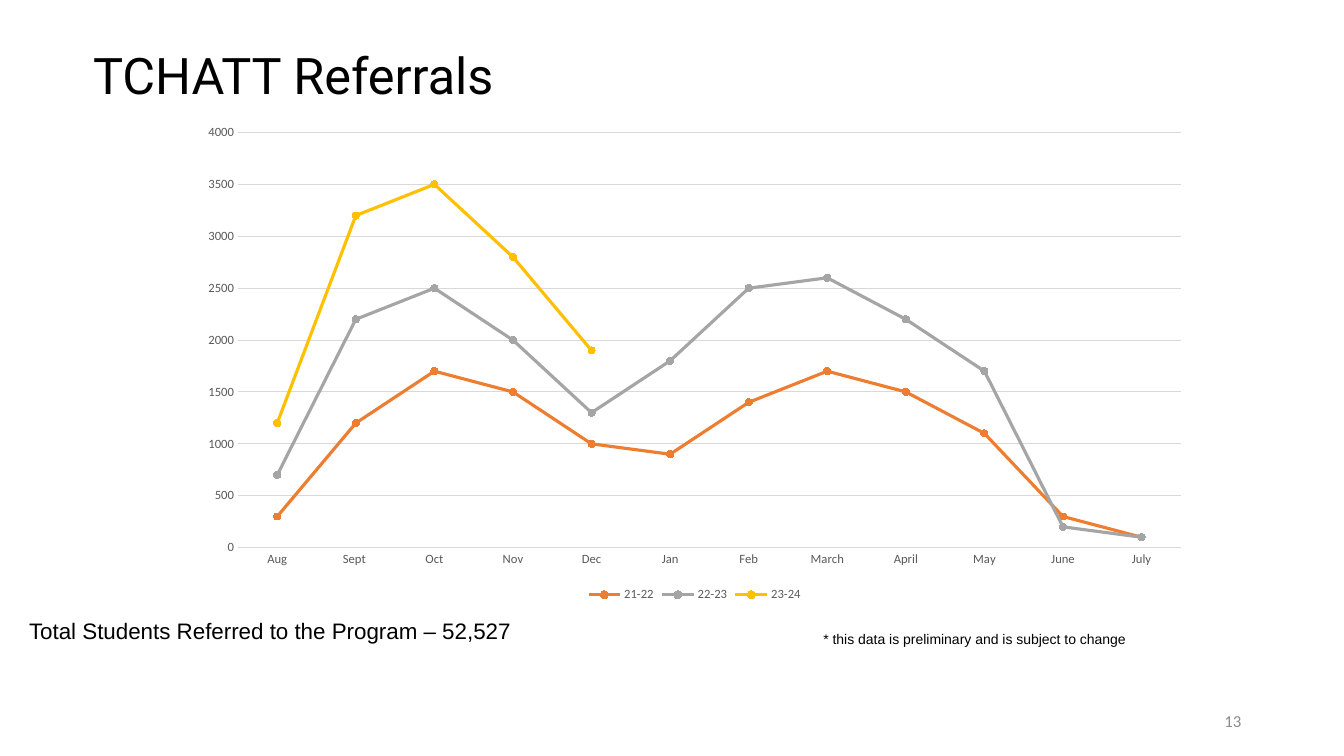
from pptx import Presentation
from pptx.chart.data import CategoryChartData
from pptx.dml.color import RGBColor
from pptx.enum.chart import XL_CHART_TYPE, XL_LEGEND_POSITION, XL_MARKER_STYLE, XL_TICK_MARK
from pptx.enum.text import MSO_ANCHOR, PP_ALIGN
from pptx.util import Pt

MONTHS = ["Aug", "Sept ", "Oct", "Nov", "Dec", "Jan",
          "Feb", "March", "April", "May", "June", "July"]
REFERRALS = {
    "21-22": [300, 1200, 1700, 1500, 1000, 900, 1400, 1700, 1500, 1100, 300, 100],
    "22-23": [700, 2200, 2500, 2000, 1300, 1800, 2500, 2600, 2200, 1700, 200, 100],
    "23-24": [1200, 3200, 3500, 2800, 1900] + [None] * 7,
}
# Text, role in the theme, (left, top, width, height), alignment, anchor
TEXTS = [
    ("13", "page", (677.8, 500.4, 216, 28.8), PP_ALIGN.RIGHT, MSO_ANCHOR.MIDDLE),
    ("TCHATT Referrals", "title", (59.4, 28.1, 761.8, 51.1), PP_ALIGN.LEFT, MSO_ANCHOR.TOP),
    ("Total Students Referred to the Program – 52,527", "total",
     (13.7, 437.4, 480.2, 26.6), PP_ALIGN.LEFT, MSO_ANCHOR.TOP),
    ("* this data is preliminary and is subject to change", "note",
     (581, 447.1, 375, 19.4), PP_ALIGN.LEFT, MSO_ANCHOR.TOP),
]
CHART_BOX = (134.4, 82.4, 723.6, 350.6)
SLIDE_SIZE = (960, 540)


class Theme:
    # Role: (font, size, colour)
    fonts = {
        "page": ("Calibri", 12, "8C8C8C"),
        "title": ("Roboto", 36, "000000"),
        "total": ("Arial", 16, "000000"),
        "note": ("Arial", 10, "000000"),
        "chart": ("Calibri", 10, "000000"),
        "labels": ("Calibri", 9, "595959"),
    }
    years = {"21-22": "ED7D31", "22-23": "A5A5A5", "23-24": "FFC000"}
    grid = "D9D9D9"
    grid_width = 0.75
    year_width = 2.25
    marker_size = 5


def apply(target, formats):
    for attribute, value in formats.items():
        setattr(target, attribute, value)


def style_font(font, role):
    name, size, colour = Theme.fonts[role]
    apply(font, {"name": name, "size": Pt(size)})
    font.color.rgb = RGBColor.from_string(colour)


def style_line(line, colour, width):
    line.color.rgb = RGBColor.from_string(colour)
    line.width = Pt(width)


def add_text(slide, text, role, box, alignment, anchor):
    frame = slide.shapes.add_textbox(*map(Pt, box)).text_frame
    apply(frame, {"word_wrap": True, "vertical_anchor": anchor})
    paragraph = frame.paragraphs[0]
    paragraph.alignment = alignment
    run = paragraph.add_run()
    run.text = text
    style_font(run.font, role)


def style_axes(chart):
    months, counts = chart.category_axis, chart.value_axis
    for axis in (months, counts):
        apply(axis, {"major_tick_mark": XL_TICK_MARK.NONE,
                     "minor_tick_mark": XL_TICK_MARK.NONE})
        style_font(axis.tick_labels.font, "labels")
    apply(counts, {"minimum_scale": 0, "maximum_scale": 4000, "major_unit": 500,
                   "has_major_gridlines": True})
    counts.format.line.fill.background()
    for line in (months.format.line, counts.major_gridlines.format.line):
        style_line(line, Theme.grid, Theme.grid_width)


def style_year(year):
    colour = Theme.years[year.name]
    year.smooth = False
    style_line(year.format.line, colour, Theme.year_width)
    marker = year.marker
    apply(marker, {"style": XL_MARKER_STYLE.CIRCLE, "size": Theme.marker_size})
    marker.format.fill.solid()
    marker.format.fill.fore_color.rgb = RGBColor.from_string(colour)
    style_line(marker.format.line, colour, Theme.grid_width)


def add_referrals_chart(slide):
    referrals = CategoryChartData()
    referrals.categories = MONTHS
    for year, counts in REFERRALS.items():
        referrals.add_series(year, counts)
    chart = slide.shapes.add_chart(
        XL_CHART_TYPE.LINE_MARKERS, *map(Pt, CHART_BOX), referrals).chart
    apply(chart, {"has_title": False, "has_legend": True})
    style_font(chart.font, "chart")
    apply(chart.legend, {"position": XL_LEGEND_POSITION.BOTTOM, "include_in_layout": False})
    style_font(chart.legend.font, "labels")
    style_axes(chart)
    plot = chart.plots[0]
    plot.vary_by_categories = False
    for year in plot.series:
        style_year(year)


def main():
    deck = Presentation()
    deck.slide_width, deck.slide_height = map(Pt, SLIDE_SIZE)
    slide = deck.slides.add_slide(deck.slide_layouts[6])
    for entry in TEXTS:
        add_text(slide, *entry)
    add_referrals_chart(slide)
    deck.save("out.pptx")


if __name__ == "__main__":
    main()
